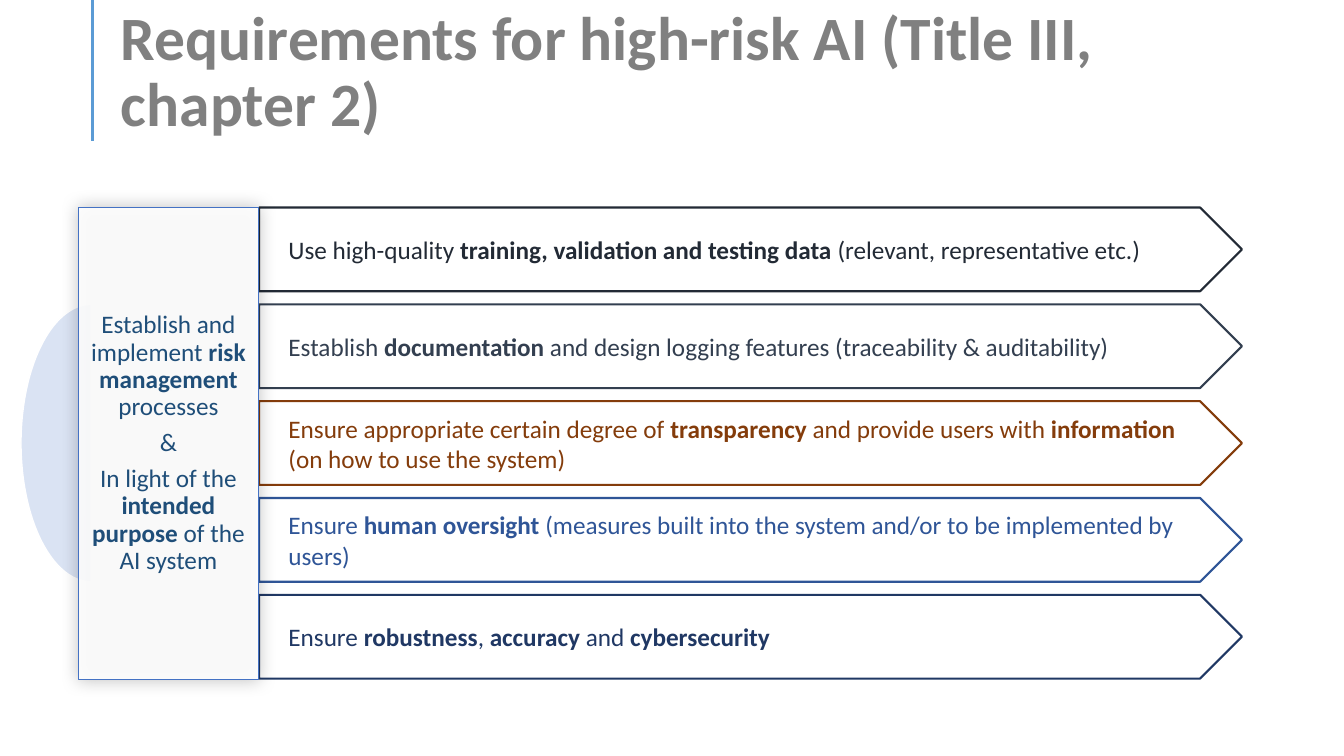
from lxml.etree import SubElement
from pptx import Presentation
from pptx.dml.color import RGBColor
from pptx.enum.shapes import MSO_CONNECTOR, MSO_SHAPE
from pptx.enum.text import MSO_ANCHOR, PP_ALIGN
from pptx.oxml.ns import qn
from pptx.util import Cm, Pt

THEME = {
    "font": "Calibri",
    "title_size": Pt(44),
    "body_size": Pt(18),
    "title": "808080",
    "title_rule": "5B9BD5",
    "white": "FFFFFF",
    "half_disc": "DAE3F3",
    "panel_line": "4472C4",
    "panel_text": "1F4E79",
    "shadow": "000000",
    "arrows": ["222A35", "333F50", "843C0B", "2F5597", "203864"],
}


def add_spans(para, text, size, color):
    """Fill a paragraph; parts between asterisks are bold, a newline breaks the line."""
    for index, part in enumerate(text.split("*")):
        for number, line in enumerate(part.split("\n")):
            if number:
                para.add_line_break()
            if not line:
                continue
            span = para.add_run()
            span.text = line
            look = {"name": THEME["font"], "size": size, "bold": index % 2 == 1}
            for name, value in look.items():
                setattr(span.font, name, value)
            span.font.color.rgb = RGBColor.from_string(color)


def add_outlined(kind, place, fill, line, width):
    box = page.shapes.add_shape(kind, *(Cm(length) for length in place))
    box.shadow.inherit = False
    box.fill.solid()
    box.fill.fore_color.rgb = RGBColor.from_string(fill)
    box.line.color.rgb = RGBColor.from_string(line)
    box.line.width = Pt(width)
    box.text_frame.word_wrap = True
    box.text_frame.vertical_anchor = MSO_ANCHOR.MIDDLE
    return box


deck = Presentation()
deck.slide_width, deck.slide_height = Cm(33.87), Cm(19.05)
page = deck.slides.add_slide(deck.slide_layouts[6])

# Title with the rule on its left
rule = page.shapes.add_connector(
    MSO_CONNECTOR.STRAIGHT, Cm(2.34), Cm(0), Cm(2.34), Cm(3.56))
rule.line.color.rgb = RGBColor.from_string(THEME["title_rule"])
rule.line.width = Pt(2.25)
SubElement(rule.element.spPr, qn("a:effectLst"))

title = page.shapes.add_textbox(Cm(2.8), Cm(1.35), Cm(29.21), Cm(2.18))
title_format = {"word_wrap": True, "vertical_anchor": MSO_ANCHOR.BOTTOM, "margin_bottom": 0}
for name, value in title_format.items():
    setattr(title.text_frame, name, value)
para = title.text_frame.paragraphs[0]
para.line_spacing = 0.9
add_spans(para, "*Requirements for high-risk AI (Title III, \nchapter 2)*",
          THEME["title_size"], THEME["title"])

# One arrow for each requirement
requirements = [
    "Use high-quality *training, validation and testing data *(relevant, representative etc.)",
    "Establish *documentation *and design logging features (traceability & auditability)",
    "Ensure appropriate certain degree of *transparency* and provide users with "
    "*information *(on how to use the system)",
    "Ensure *human oversight *(measures built into the system and/or to be implemented by users)",
    "Ensure *robustness*, *accuracy* and *cybersecurity*",
]
arrow_top, arrow_step = 5.23, 2.44
for row, (text, color) in enumerate(zip(requirements, THEME["arrows"])):
    arrow = add_outlined(MSO_SHAPE.PENTAGON, (6.53, arrow_top + row * arrow_step, 24.77, 2.11),
                         THEME["white"], color, 1.5)
    arrow.text_frame.margin_left = Cm(0.74)
    para = arrow.text_frame.paragraphs[0]
    para.alignment = PP_ALIGN.LEFT
    add_spans(para, text, THEME["body_size"], color)

# Half disc behind the risk management panel
half_disc = add_outlined(MSO_SHAPE.PIE, (0.53, 7.67, 3.53, 6.99),
                         THEME["half_disc"], THEME["white"], 1)
half_disc.adjustments[0] = 54
half_disc.adjustments[1] = 162

panel = add_outlined(MSO_SHAPE.RECTANGLE, (1.98, arrow_top, 4.53, 11.89),
                     THEME["white"], THEME["panel_line"], 1)
panel_fill = panel.element.spPr.find(qn("a:solidFill")).find(qn("a:srgbClr"))
SubElement(panel_fill, qn("a:alpha"), val="90000")
effects = panel.element.spPr.find(qn("a:effectLst"))
shadow = SubElement(effects, qn("a:outerShdw"), blurRad=str(Cm(0.45)), algn="ctr", rotWithShape="0")
shadow_color = SubElement(shadow, qn("a:srgbClr"), val=THEME["shadow"])
SubElement(shadow_color, qn("a:alpha"), val="25000")

frame = panel.text_frame
for side in ("left", "top", "right", "bottom"):
    setattr(frame, f"margin_{side}", Cm(0.18))
statements = [
    "Establish and implement *risk management *processes",
    "&",
    "In light of the *intended purpose *of the AI system",
]
for index, text in enumerate(statements):
    para = frame.add_paragraph() if index else frame.paragraphs[0]
    layout = {"alignment": PP_ALIGN.CENTER, "line_spacing": 0.9, "space_after": Pt(6.3)}
    for name, value in layout.items():
        setattr(para, name, value)
    add_spans(para, text, THEME["body_size"], THEME["panel_text"])

deck.save("out.pptx")
